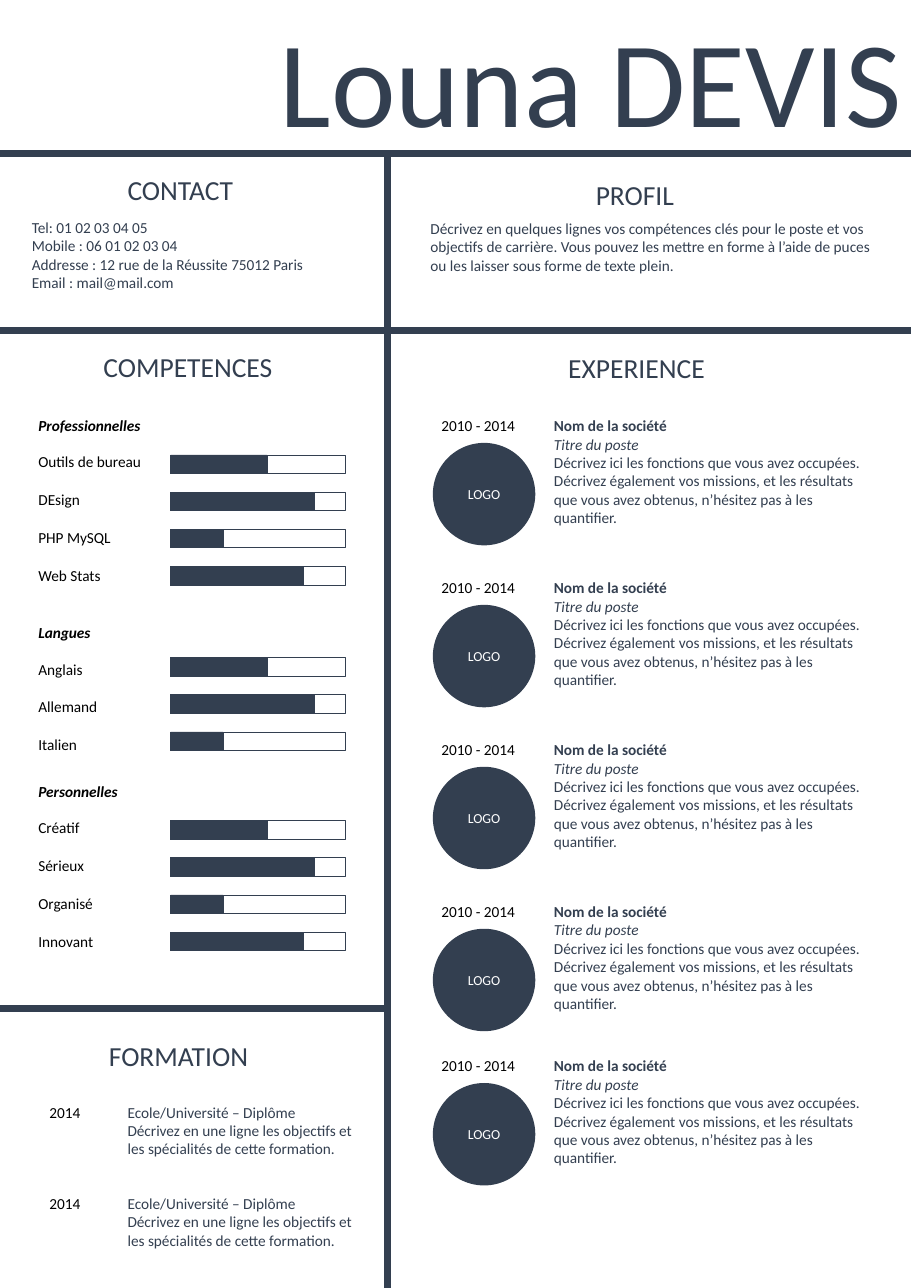
from dataclasses import dataclass

from lxml.etree import SubElement
from pptx import Presentation
from pptx.dml.color import RGBColor
from pptx.enum.shapes import MSO_CONNECTOR, MSO_SHAPE
from pptx.enum.text import MSO_ANCHOR, MSO_AUTO_SIZE, PP_ALIGN
from pptx.oxml.ns import qn
from pptx.util import Inches, Pt


@dataclass(frozen=True)
class Theme:
    navy: RGBColor = RGBColor(0x33, 0x3F, 0x50)
    black: RGBColor = RGBColor(0, 0, 0)
    white: RGBColor = RGBColor(255, 255, 255)
    font: str = "Calibri"
    name_size: float = 80
    heading_size: float = 18
    body_size: float = 10
    badge_size: float = 9
    rule_width: float = 4.5
    bar_line_width: float = 0.5


THEME = Theme()

# Grid of square cells, a tenth of an inch each
CELL = 0.1
COLUMNS, ROWS = 82.7, 116.9
SPLIT_COLUMN = 35.2
NAME_ROW, PROFILE_ROW, EDUCATION_ROW = 13.9, 30, 91.5
LABEL_STEP, BAR_STEP = 10.3 / 3, 10.1 / 3
BAR_LEFT, BAR_WIDTH, BAR_HEIGHT = 15.5, 15.9, 1.7

HEADINGS = [
    ("CONTACT", 10.6, 15.2, 11.7),
    ("PROFIL", 53.1, 15.7, 9.2),
    ("COMPETENCES", 8.4, 31.3, 17.5),
    ("EXPERIENCE", 50.6, 31.4, 14.5),
    ("FORMATION", 8.9, 93.8, 14.8),
]
CONTACT = [
    "Tel: 01 02 03 04 05",
    "Mobile : 06 01 02 03 04",
    "Addresse : 12 rue de la Réussite 75012 Paris",
    "Email : mail@mail.com",
]
PROFILE = ("Décrivez en quelques lignes vos compétences clés pour le poste et vos "
           "objectifs de carrière. Vous pouvez les mettre en forme à l’aide de puces "
           "ou les laisser sous forme de texte plein.")
# Group name, heading row, first bar row, skills
SKILL_GROUPS = [
    ("Professionnelles", 37.3, 41.3,
     ["Outils de bureau", "DEsign", "PHP MySQL", "Web Stats"]),
    ("Langues", 56.1, 59.7, ["Anglais", "Allemand", "Italien"]),
    ("Personnelles", 70.5, 74.5, ["Créatif", "Sérieux", "Organisé", "Innovant"]),
]
SKILL_LEVELS = [0.55, 0.82, 0.3, 0.76]
JOB_ROWS = [37.3 + 14.7 * index for index in range(4)] + [95.4]
JOB = [
    ("Nom de la société", {"bold": True}),
    ("Titre du poste", {"italic": True}),
    ("Décrivez ici les fonctions que vous avez occupées. Décrivez également vos "
     "missions, et les résultats que vous avez obtenus, n’hésitez pas à les "
     "quantifier.", {}),
]
DEGREE_ROWS = [99.6, 107.9]
DEGREE = [
    "Ecole/Université – Diplôme",
    "Décrivez en une ligne les objectifs et les spécialités de cette formation.",
]


def grid(*cells):
    return [Inches(count * CELL) for count in cells]


def set_attributes(target, values):
    for name, value in values.items():
        setattr(target, name, value)


def write(paragraph, text, size, color, **style):
    run = paragraph.add_run()
    run.text = text
    set_attributes(run.font, {"name": THEME.font, "size": Pt(size),
                              "bold": False, "italic": False, **style})
    run.font.color.rgb = color


def add_text(slide, box, lines, size=THEME.body_size, color=THEME.navy, wrap=True):
    """Each line is a (text, style) pair and becomes one paragraph."""
    frame = slide.shapes.add_textbox(*grid(*box)).text_frame
    set_attributes(frame, {"word_wrap": wrap,
                           "auto_size": MSO_AUTO_SIZE.SHAPE_TO_FIT_TEXT})
    for index, (text, style) in enumerate(lines):
        paragraph = frame.add_paragraph() if index else frame.paragraphs[0]
        write(paragraph, text, size, color, **style)


def add_name(slide, text):
    title = slide.shapes.title
    left, top, width, height = grid(24.4, 0, 59.1, 14.5)
    set_attributes(title, {"left": left, "top": top,
                           "width": width, "height": height})
    set_attributes(title.text_frame, {"word_wrap": False,
                                      "vertical_anchor": MSO_ANCHOR.TOP,
                                      "auto_size": MSO_AUTO_SIZE.SHAPE_TO_FIT_TEXT})
    paragraph = title.text_frame.paragraphs[0]
    paragraph.alignment = PP_ALIGN.LEFT
    write(paragraph, text, THEME.name_size, THEME.navy)


def add_rule(slide, *ends):
    rule = slide.shapes.add_connector(MSO_CONNECTOR.STRAIGHT, *grid(*ends))
    rule.line.color.rgb = THEME.navy
    rule.line.width = Pt(THEME.rule_width)
    SubElement(rule._element.spPr, qn("a:effectLst"))


def add_bar(slide, row, width, filled):
    bar = slide.shapes.add_shape(MSO_SHAPE.RECTANGLE,
                                 *grid(BAR_LEFT, row, width, BAR_HEIGHT))
    bar.shadow.inherit = False
    bar.line.color.rgb = THEME.navy
    bar.line.width = Pt(THEME.bar_line_width)
    if filled:
        bar.fill.solid()
        bar.fill.fore_color.rgb = THEME.navy
    else:
        bar.fill.background()


def add_skill_group(slide, name, heading_row, bar_row, skills):
    add_text(slide, (2.5, heading_row, 29.8, 2.7),
             [(name, {"bold": True, "italic": True})], color=THEME.black)
    for index, (skill, level) in enumerate(zip(skills, SKILL_LEVELS)):
        label_row = heading_row + 3.3 + index * LABEL_STEP
        add_text(slide, (2.5, label_row, 13.5, 2.7), [(skill, {})],
                 color=THEME.black)
        row = bar_row + index * BAR_STEP
        add_bar(slide, row, BAR_WIDTH, filled=False)
        add_bar(slide, row, BAR_WIDTH * level, filled=True)


def add_badge(slide, row):
    badge = slide.shapes.add_shape(MSO_SHAPE.OVAL, *grid(39.3, row, 9.3, 9.3))
    badge.shadow.inherit = False
    badge.fill.solid()
    badge.fill.fore_color.rgb = THEME.navy
    badge.line.fill.background()
    frame = badge.text_frame
    set_attributes(frame, {"margin_left": 0, "margin_right": 0, "margin_top": 0,
                           "margin_bottom": 0, "vertical_anchor": MSO_ANCHOR.MIDDLE})
    frame.paragraphs[0].alignment = PP_ALIGN.CENTER
    write(frame.paragraphs[0], "LOGO", THEME.badge_size, THEME.white)


def add_job(slide, row):
    add_text(slide, (39.1, row, 11.3, 2.7), [("2010 - 2014", {})], color=THEME.black)
    add_text(slide, (49.3, row, 30.8, 11.1), JOB)
    add_badge(slide, row + 2.9)


def add_degree(slide, row):
    add_text(slide, (3.5, row, 7.1, 2.7), [("2014", {})], color=THEME.black)
    add_text(slide, (10.6, row, 22.4, 7.7), [(line, {}) for line in DEGREE])


def main():
    presentation = Presentation()
    presentation.slide_width, presentation.slide_height = grid(COLUMNS, ROWS)
    slide = presentation.slides.add_slide(presentation.slide_layouts[5])

    # Name and section headings
    add_name(slide, "Louna DEVIS")
    for text, left, top, width in HEADINGS:
        add_text(slide, (left, top, width, 4), [(text, {})],
                 size=THEME.heading_size, wrap=False)

    # Contact and profile
    add_text(slide, (1.9, 19.3, 31.1, 7.7), [(line, {}) for line in CONTACT])
    add_text(slide, (38.1, 19.4, 42, 6.1), [(PROFILE, {})])

    # Skills, experience and education
    for group in SKILL_GROUPS:
        add_skill_group(slide, *group)
    for row in JOB_ROWS:
        add_job(slide, row)
    for row in DEGREE_ROWS:
        add_degree(slide, row)

    # Rules between the sections
    for row, end in ((NAME_ROW, COLUMNS), (PROFILE_ROW, COLUMNS),
                     (EDUCATION_ROW, SPLIT_COLUMN)):
        add_rule(slide, 0, row, end, row)
    add_rule(slide, SPLIT_COLUMN, NAME_ROW, SPLIT_COLUMN, ROWS)

    presentation.save("out.pptx")


if __name__ == "__main__":
    main()
